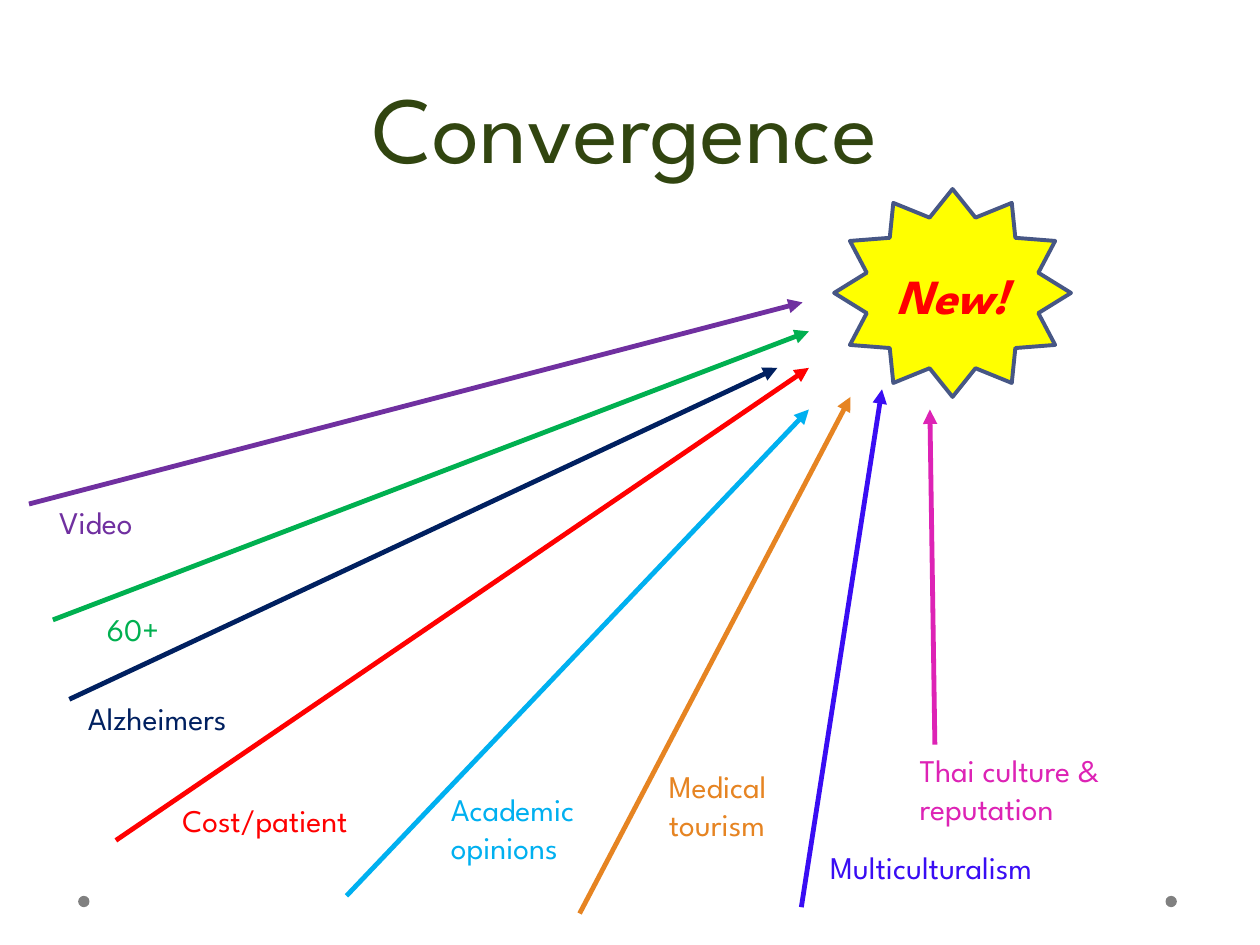
import pptx
import pptx.util
import pptx.dml.color
import pptx.enum.shapes
import pptx.enum.text
import pptx.oxml
import pptx.oxml.ns

PX = 9144  # EMU per px, 100 px to the inch
FONT = "League Spartan"
RGB = pptx.dml.color.RGBColor
SHAPE = pptx.enum.shapes.MSO_SHAPE
ALIGN = pptx.enum.text.PP_ALIGN
ANCHOR = pptx.enum.text.MSO_ANCHOR

GREY = RGB(0x80, 0x80, 0x80)
OLIVE = RGB(0x31, 0x45, 0x10)
RED = RGB(0xFF, 0x00, 0x00)
GREEN = RGB(0x00, 0xB0, 0x50)
NAVY = RGB(0x00, 0x20, 0x60)
SKY = RGB(0x00, 0xB0, 0xF0)
ORANGE = RGB(0xE6, 0x84, 0x22)
PURPLE = RGB(0x70, 0x30, 0xA0)
BLUE = RGB(0x39, 0x0D, 0xF3)
PINK = RGB(0xDD, 0x23, 0xB5)
YELLOW = RGB(0xFF, 0xFF, 0x00)
SLATE = RGB(0x47, 0x57, 0x85)

deck = pptx.Presentation()
deck.slide_width, deck.slide_height = 1000 * PX, 750 * PX
slide = deck.slides.add_slide(deck.slide_layouts[6])


def add_text(text, box, size, color, align=ALIGN.LEFT, anchor=ANCHOR.TOP, **style):
    frame = slide.shapes.add_textbox(*(n * PX for n in box)).text_frame
    frame.word_wrap = True
    frame.vertical_anchor = anchor
    paragraph = frame.paragraphs[0]
    paragraph.alignment = align
    run = paragraph.add_run()
    run.text = text
    font_format = {"name": FONT, "size": pptx.util.Pt(size), **style}
    for key, value in font_format.items():
        setattr(run.font, key, value)
    run.font.color.rgb = color
    return paragraph


def add_solid(kind, box, fill):
    solid = slide.shapes.add_shape(kind, *(n * PX for n in box))
    solid.shadow.inherit = False
    solid.fill.solid()
    solid.fill.fore_color.rgb = fill
    return solid


# Footer dots
for left in (62, 925):
    add_solid(SHAPE.OVAL, (left, 711, 9, 9), GREY).line.fill.background()

# Title
title = add_text("Convergence", (42, 0, 908, 150), 54, OLIVE, ALIGN.CENTER, ANCHOR.BOTTOM)
title.line_spacing = pptx.util.Pt(58)

# Trends: label, label box, arrow start, arrow end, colour
trends = [
    ("Cost/patient", (135, 631, 183, 40), (92, 667), (642, 292), RED),
    ("60+", (75, 479, 67, 40), (42, 492), (642, 263), GREEN),
    ("Alzheimers", (60, 550, 167, 40), (55, 555), (617, 292), NAVY),
    ("Academic opinions", (348, 622, 183, 71), (275, 711), (642, 325), SKY),
    ("Medical tourism", (521, 604, 131, 71), (460, 725), (675, 315), ORANGE),
    ("Video", (37, 394, 108, 40), (23, 400), (637, 240), PURPLE),
    ("Multiculturalism", (649, 668, 213, 40), (636, 720), (700, 309), BLUE),
    ("Thai culture & reputation", (720, 591, 213, 71), (742, 591), (738, 325), PINK),
]
for label, box, start, end, color in trends:
    arrow = slide.shapes.add_connector(
        pptx.enum.shapes.MSO_CONNECTOR.STRAIGHT, *(n * PX for n in start + end))
    arrow.line.color.rgb = color
    arrow.line.width = pptx.util.Pt(2.75)
    head = pptx.oxml.parse_xml(
        f'<a:tailEnd {pptx.oxml.ns.nsdecls("a")} type="triangle"/>')
    arrow.line._get_or_add_ln().append(head)
    no_shadow = pptx.oxml.parse_xml(f'<a:effectLst {pptx.oxml.ns.nsdecls("a")}/>')
    arrow._element.spPr.append(no_shadow)
    add_text(label, box, 18, color)

# Star where the trends meet
star = add_solid(SHAPE.STAR_12_POINT, (662, 150, 188, 165), YELLOW)
star.line.color.rgb = SLATE
star.line.width = pptx.util.Pt(2.25)
add_text("New!", (697, 206, 117, 57), 28, RED, ALIGN.CENTER, bold=True, italic=True)

deck.save("out.pptx")
